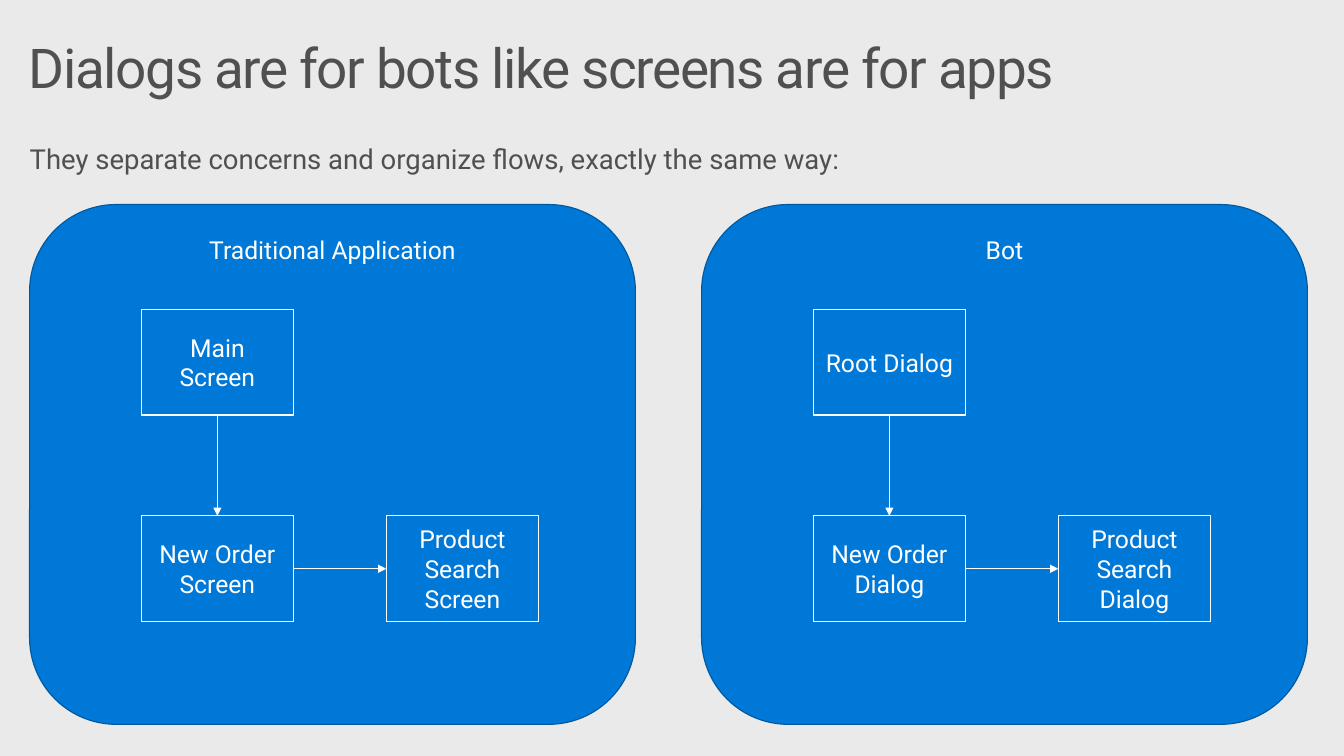
from dataclasses import dataclass

from lxml.etree import SubElement
from pptx import Presentation
from pptx.dml.color import RGBColor
from pptx.enum.shapes import MSO_CONNECTOR, MSO_SHAPE
from pptx.enum.text import MSO_ANCHOR, PP_ALIGN
from pptx.oxml.ns import qn
from pptx.util import Inches, Pt


@dataclass(frozen=True)
class Theme:
    """Colours, font and type sizes of the slide."""
    background: str = "EAEAEA"
    ink: str = "505050"
    blue: str = "0078D7"
    edge: str = "00599F"
    white: str = "FFFFFF"
    font: str = "Roboto"
    title: int = 40
    lead: int = 20
    label: int = 18


THEME = Theme()
WIDTH, HEIGHT = 13.6, 7.65
PANEL_LEFT, PANEL_TOP, PANEL_W, PANEL_H = 0.3, 2.07, 6.13, 5.26
PANEL_STEP = WIDTH / 2
BOX_LEFT, BOX_TOP, BOX_W, BOX_H = 1.13, 1.06, 1.54, 1.07
COL_STEP, ROW_STEP = 2.48, 2.09
PANELS = [
    ("Traditional Application",
     ("Main Screen", "New Order Screen", "Product Search Screen")),
    ("Bot", ("Root Dialog", "New Order Dialog", "Product Search Dialog")),
]
CELLS = [(0, 0), (0, 1), (1, 1)]


def rgb(colour):
    """Turn a hex string into a colour."""
    return RGBColor.from_string(colour)


def write(tf, text, size, colour, align=PP_ALIGN.LEFT):
    """Write one styled paragraph and return it."""
    tf.word_wrap = True
    p = tf.paragraphs[0]
    p.add_run().text = text
    p.alignment = align
    p.font.name = THEME.font
    p.font.size = Pt(size)
    p.font.color.rgb = rgb(colour)
    return p


def add_text(s, box, insets, text, size):
    """Add a text box with tight lines and return its paragraph."""
    tf = s.shapes.add_textbox(*map(Inches, box)).text_frame
    tf.margin_left = tf.margin_right = Inches(insets[0])
    tf.margin_top = tf.margin_bottom = Inches(insets[1])
    p = write(tf, text, size, THEME.ink)
    p.line_spacing = 0.9
    return p


def add_block(s, kind, box, text, edge, anchor):
    """Add a blue outlined shape with a centred label."""
    sp = s.shapes.add_shape(kind, *map(Inches, box))
    sp.shadow.inherit = False
    sp.fill.solid()
    sp.fill.fore_color.rgb = rgb(THEME.blue)
    sp.line.color.rgb = rgb(edge)
    sp.line.width = Pt(0.85)
    sp.text_frame.vertical_anchor = anchor
    write(sp.text_frame, text, THEME.label, THEME.white, PP_ALIGN.CENTER)
    return sp


def add_arrow(s, start, start_site, end, end_site):
    """Join two blocks with a white arrow."""
    cx = s.shapes.add_connector(MSO_CONNECTOR.STRAIGHT, 0, 0, 0, 0)
    cx.begin_connect(start, start_site)
    cx.end_connect(end, end_site)
    cx.line.color.rgb = rgb(THEME.white)
    cx.line.width = Pt(0.75)
    SubElement(cx.line._get_or_add_ln(), qn("a:tailEnd"), type="triangle")
    SubElement(cx._element.spPr, qn("a:effectLst"))


def add_panel(s, left, heading, labels):
    """Add a rounded panel with its three linked steps."""
    add_block(s, MSO_SHAPE.ROUNDED_RECTANGLE, (left, PANEL_TOP, PANEL_W, PANEL_H),
              heading, THEME.edge, MSO_ANCHOR.TOP)
    first, order, search = [
        add_block(s, MSO_SHAPE.RECTANGLE,
                  (left + BOX_LEFT + col * COL_STEP,
                   PANEL_TOP + BOX_TOP + row * ROW_STEP, BOX_W, BOX_H),
                  label, THEME.white, MSO_ANCHOR.MIDDLE)
        for label, (col, row) in zip(labels, CELLS)
    ]
    add_arrow(s, first, 2, order, 0)
    add_arrow(s, order, 3, search, 1)


def main():
    """Build and save the slide."""
    prs = Presentation()
    prs.slide_width, prs.slide_height = Inches(WIDTH), Inches(HEIGHT)
    s = prs.slides.add_slide(prs.slide_layouts[6])
    s.background.fill.solid()
    s.background.fill.fore_color.rgb = rgb(THEME.background)
    title = add_text(s, (0.13, 0.32, 13, 1), (0.16, 0.1),
                     "Dialogs are for bots like screens are for apps", THEME.title)
    title.runs[0]._r.get_or_add_rPr().set("spc", "-100")
    lead = add_text(s, (0.1, 1.33, 12.65, 0.7), (0.2, 0.16),
                    "They separate concerns and organize flows, exactly the same way:",
                    THEME.lead)
    lead.space_after = Pt(6)
    for i, (heading, labels) in enumerate(PANELS):
        add_panel(s, PANEL_LEFT + i * PANEL_STEP, heading, labels)
    prs.save("out.pptx")


if __name__ == "__main__":
    main()
